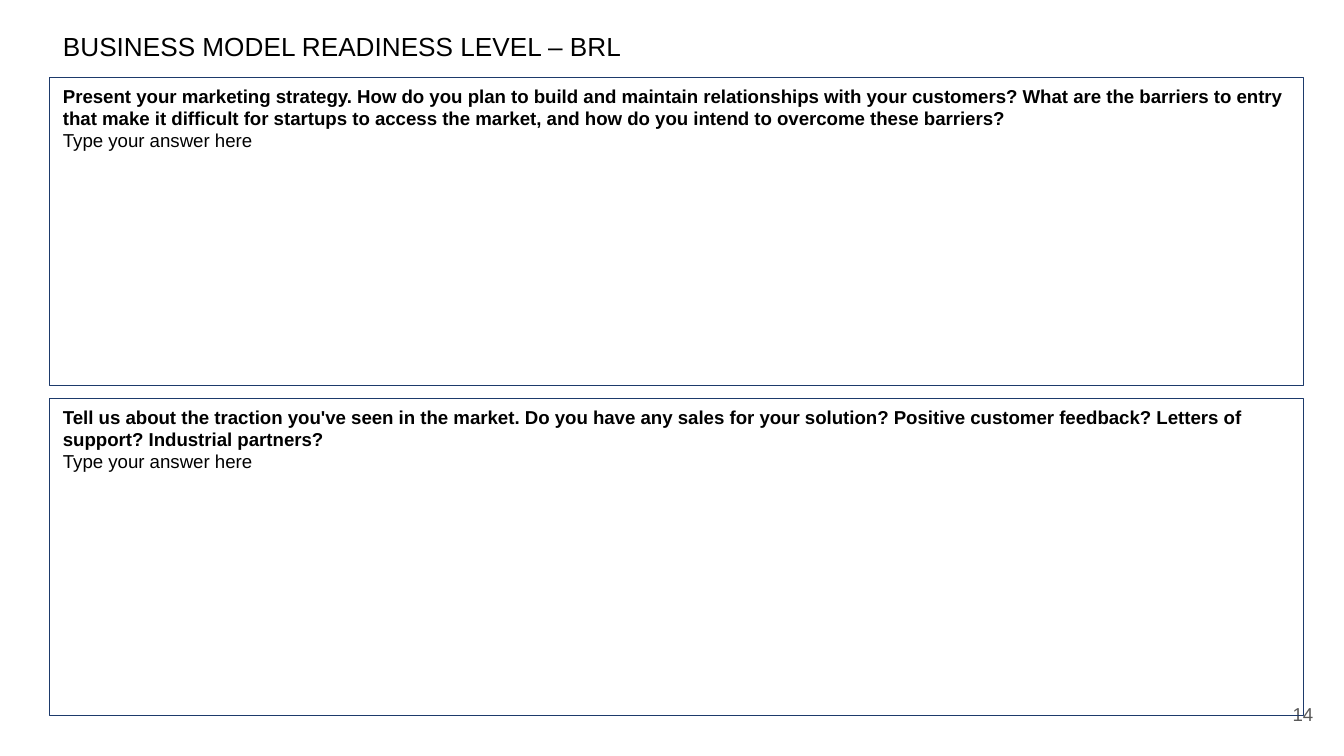
import pptx
import pptx.dml.color
import pptx.enum.shapes
import pptx.enum.text
import pptx.util

Cm = pptx.util.Cm
Pt = pptx.util.Pt
RGBColor = pptx.dml.color.RGBColor
Align = pptx.enum.text.PP_ALIGN
Anchor = pptx.enum.text.MSO_ANCHOR

BLACK = RGBColor(0x00, 0x00, 0x00)
GREY = RGBColor(0x59, 0x59, 0x59)
NAVY = RGBColor(0x1D, 0x3A, 0x6B)

LEFT = 0.94
PANEL_WIDTH = 23.7
PROMPT = "Type your answer here"
QUESTIONS = [
    (1.47, 5.82,
     "Present your marketing strategy. How do you plan to build and maintain "
     "relationships with your customers? What are the barriers to entry that make it "
     "difficult for startups to access the market, and how do you intend to overcome "
     "these barriers?"),
    (7.54, 5.99,
     "Tell us about the traction you've seen in the market. Do you have any sales for "
     "your solution? Positive customer feedback? Letters of support? Industrial partners?"),
]


def set_format(target, values):
    """Set each named attribute of the target."""
    for attribute, value in values.items():
        setattr(target, attribute, value)


def write_paragraph(paragraph, text, size, color, bold=False, align=Align.LEFT):
    """Write one formatted run into the paragraph."""
    paragraph.alignment = align
    run = paragraph.add_run()
    run.text = text
    set_format(run.font, {"name": "Arial", "size": Pt(size), "bold": bold})
    run.font.color.rgb = color


def add_label(slide, box, text, size, color, anchor=Anchor.TOP, align=Align.LEFT):
    """Place a single line of text in the box."""
    frame = slide.shapes.add_textbox(*map(Cm, box)).text_frame
    inset = Cm(0.25)
    set_format(frame, {
        "word_wrap": True, "vertical_anchor": anchor,
        "margin_left": inset, "margin_right": inset,
        "margin_top": inset, "margin_bottom": inset,
    })
    write_paragraph(frame.paragraphs[0], text, size, color, align=align)


def add_question_panel(slide, box, question):
    """Place an outlined panel with a question and its answer prompt in the box."""
    panel = slide.shapes.add_shape(
        pptx.enum.shapes.MSO_SHAPE.RECTANGLE, *map(Cm, box))
    panel.shadow.inherit = False
    panel.fill.background()
    panel.line.color.rgb = NAVY
    panel.line.width = Pt(0.5)
    frame = panel.text_frame
    set_format(frame, {"word_wrap": True, "vertical_anchor": Anchor.TOP})
    write_paragraph(frame.paragraphs[0], question, 10, BLACK, bold=True)
    write_paragraph(frame.add_paragraph(), PROMPT, 10, BLACK)


def main():
    """Build and save the slide."""
    deck = pptx.Presentation()
    set_format(deck, {"slide_width": Cm(25.4), "slide_height": Cm(14.29)})
    slide = deck.slides.add_slide(deck.slide_layouts[6])
    add_label(slide, (LEFT, 0.33, 22.78, 1.14),
              "BUSINESS MODEL READINESS LEVEL – BRL", 14, BLACK)
    add_label(slide, (23.55, 12.95, 1.52, 1.09), "14", 10, GREY,
              Anchor.MIDDLE, Align.RIGHT)
    for top, height, question in QUESTIONS:
        add_question_panel(slide, (LEFT, top, PANEL_WIDTH, height), question)
    deck.save("out.pptx")


if __name__ == "__main__":
    main()
